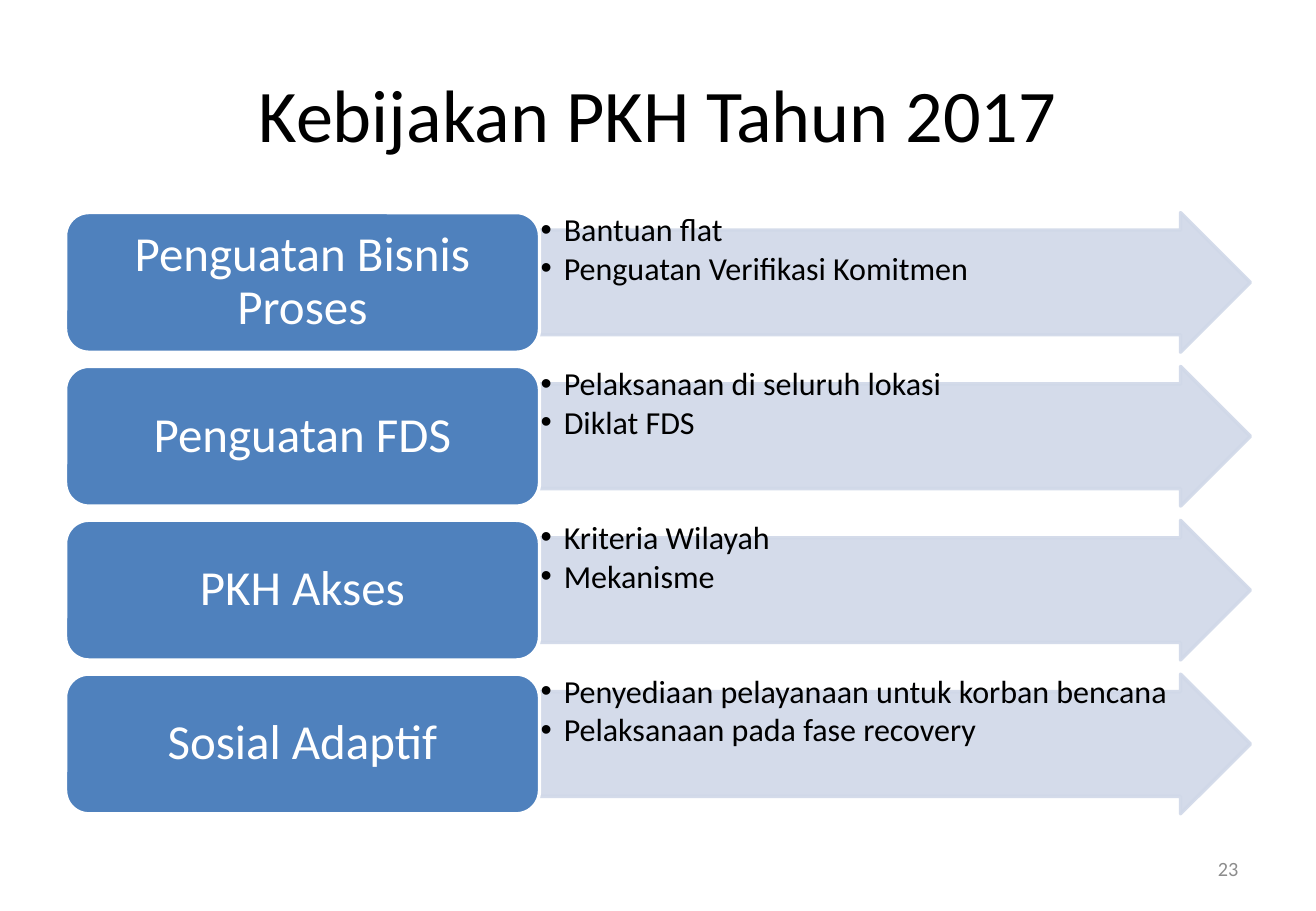
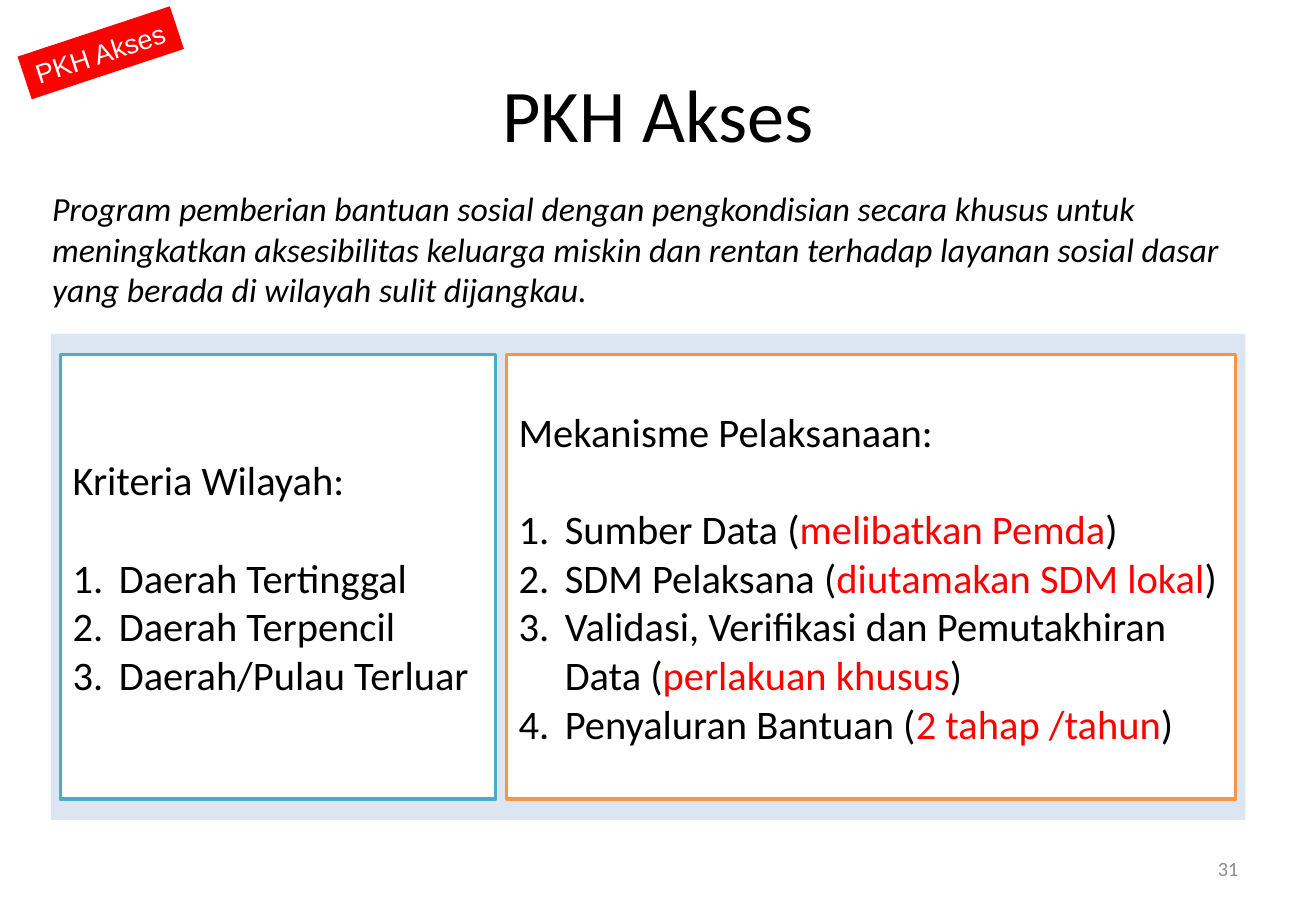
from lxml import etree
from pptx import Presentation
from pptx.dml.color import RGBColor
from pptx.enum.shapes import MSO_SHAPE
from pptx.enum.text import MSO_ANCHOR, PP_ALIGN
from pptx.oxml.ns import qn
from pptx.util import Inches, Pt

COLORS = {
    "black": "000000",
    "white": "FFFFFF",
    "blue": "4F81BD",
    "pale_blue": "D0D8E8",
    "panel": "DCE6F2",
    "teal": "4BACC6",
    "orange": "F79646",
    "red": "FF0000",
    "gray": "8C8C8C",
}
MARGIN, CONTENT_WIDTH = 0.54, 9.75
ROW_HEIGHT = 1.15

POLICIES = [
    ("Penguatan Bisnis Proses", ["Bantuan flat", "Penguatan Verifikasi Komitmen"]),
    ("Penguatan FDS", ["Pelaksanaan di seluruh lokasi", "Diklat FDS"]),
    ("PKH Akses", ["Kriteria Wilayah", "Mekanisme"]),
    ("Sosial Adaptif", ["Penyediaan pelayanaan untuk korban bencana",
                        "Pelaksanaan pada fase recovery"]),
]
DEFINITION = (
    "Program pemberian bantuan sosial dengan pengkondisian secara khusus untuk "
    "meningkatkan aksesibilitas keluarga miskin dan rentan terhadap layanan sosial "
    "dasar yang berada di wilayah sulit dijangkau."
)
# Each item is a list of runs; every second run is highlighted
CRITERIA = [["Daerah Tertinggal"], ["Daerah Terpencil"], ["Daerah/Pulau Terluar"]]
MECHANISM = [
    ["Sumber Data (", "melibatkan Pemda", ")"],
    ["SDM Pelaksana (", "diutamakan SDM lokal", ")"],
    ["Validasi, Verifikasi dan Pemutakhiran Data (", "perlakuan khusus", ")"],
    ["Penyaluran Bantuan (", "2 tahap /tahun", ")"],
]


def rgb(name):
    return RGBColor.from_string(COLORS[name])


# Text helpers
def style_run(run, size, color="black", font="Calibri", italic=False):
    run.font.size = Pt(size)
    run.font.name = font
    run.font.italic = italic
    run.font.color.rgb = rgb(color)


def write(frame, texts, size, color="black", align=PP_ALIGN.LEFT, **style):
    frame.text = "\n".join(texts)
    for paragraph in frame.paragraphs:
        paragraph.alignment = align
        for run in paragraph.runs:
            style_run(run, size, color, **style)


def set_insets(frame, horizontal, vertical):
    frame.margin_left = frame.margin_right = Inches(horizontal)
    frame.margin_top = frame.margin_bottom = Inches(vertical)


def add_marker(paragraph, indent, tag, **attributes):
    properties = paragraph._p.get_or_add_pPr()
    properties.set("marL", str(Inches(indent)))
    properties.set("indent", str(-Inches(indent)))
    font = "Arial" if tag == "a:buChar" else "+mj-lt"
    etree.SubElement(properties, qn("a:buFont"), typeface=font)
    etree.SubElement(properties, qn(tag), **attributes)


def add_text(slide, box, anchor=MSO_ANCHOR.TOP):
    frame = slide.shapes.add_textbox(*map(Inches, box)).text_frame
    frame.word_wrap = True
    frame.vertical_anchor = anchor
    return frame


# Shape helpers
def add_block(slide, kind, box, fill, line=None):
    block = slide.shapes.add_shape(kind, *map(Inches, box))
    block.shadow.inherit = False
    block.fill.solid()
    block.fill.fore_color.rgb = rgb(fill)
    if line:
        block.line.color.rgb = rgb(line)
        block.line.width = Pt(2)
    else:
        block.line.fill.background()
    return block


def set_opacity(block, percent):
    for color in block._element.spPr.iter(qn("a:srgbClr")):
        etree.SubElement(color, qn("a:alpha"), val=str(percent * 1000))


# Title and page number shared by the slides
def add_page(deck, title, number):
    slide = deck.slides.add_slide(deck.slide_layouts[6])
    heading = add_text(slide, (MARGIN, 0.3, CONTENT_WIDTH, 1.25), MSO_ANCHOR.MIDDLE)
    write(heading, [title], 44, align=PP_ALIGN.CENTER)
    footer = add_text(slide, (7.76, 6.95, 2.53, 0.4), MSO_ANCHOR.MIDDLE)
    write(footer, [number], 12, "gray", PP_ALIGN.RIGHT)
    return slide


# One policy: label on the left, arrow with bullets on the right
def add_policy_row(slide, box, label, points):
    left, top, width, height = box
    label_width = width * 0.4
    arrow_box = (left + label_width, top, width - label_width, height)

    arrow = add_block(slide, MSO_SHAPE.RIGHT_ARROW, arrow_box, "pale_blue", "pale_blue")
    arrow.adjustments[0], arrow.adjustments[1] = 0.75, 0.5
    set_opacity(arrow, 90)

    details = add_text(slide, arrow_box)
    set_insets(details, 0.01, 0.01)
    write(details, points, 19)
    for paragraph in details.paragraphs:
        add_marker(paragraph, 0.19, "a:buChar", char="•")
        paragraph.line_spacing = 0.9
        paragraph.space_after = Pt(2.5)

    name = add_block(slide, MSO_SHAPE.ROUNDED_RECTANGLE,
                     (left, top, label_width, height), "blue", "white").text_frame
    name.word_wrap = True
    name.vertical_anchor = MSO_ANCHOR.MIDDLE
    set_insets(name, 0.06, 0)
    write(name, [label], 29, "white", PP_ALIGN.CENTER)
    name.paragraphs[0].line_spacing = 0.9


def add_policy_list(slide, box):
    left, top, width, height = box
    pitch = (height - ROW_HEIGHT) / (len(POLICIES) - 1)
    for index, (label, points) in enumerate(POLICIES):
        row = (left, top + index * pitch, width, ROW_HEIGHT)
        add_policy_row(slide, row, label, points)


# Outlined card with a heading and a numbered list
def add_card(slide, box, line, heading, items):
    card = add_block(slide, MSO_SHAPE.RECTANGLE, box, "white", line).text_frame
    card.word_wrap = True
    card.vertical_anchor = MSO_ANCHOR.MIDDLE
    write(card, [heading], 24)
    card.paragraphs[0].space_after = Pt(29)
    for item in items:
        paragraph = card.add_paragraph()
        paragraph.alignment = PP_ALIGN.LEFT
        add_marker(paragraph, 0.38, "a:buAutoNum", type="arabicPeriod")
        for position, text in enumerate(item):
            run = paragraph.add_run()
            run.text = text
            style_run(run, 24, "red" if position % 2 else "black")


# Pale panel holding both cards
def add_access_panel(slide, box):
    left, top, width, height = box
    add_block(slide, MSO_SHAPE.RECTANGLE, box, "panel")
    side, edge, criteria_width = 0.08, 0.17, 3.58
    card_top, card_height = top + edge, height - 2 * edge
    mechanism_left = left + 2 * side + criteria_width + 0.01
    add_card(slide, (left + side, card_top, criteria_width, card_height),
             "teal", "Kriteria Wilayah:", CRITERIA)
    add_card(slide, (mechanism_left, card_top, left + width - side - mechanism_left,
                     card_height),
             "orange", "Mekanisme Pelaksanaan:", MECHANISM)


# Tilted tag in the corner
def add_tag(slide, box, text):
    tag = add_block(slide, MSO_SHAPE.RECTANGLE, box, "red")
    tag.rotation = 341.7
    tag.text_frame.word_wrap = False
    write(tag.text_frame, [text], 16, "white", font="Arial")


def build_policy_slide(deck):
    slide = add_page(deck, "Kebijakan PKH Tahun 2017", "23")
    add_policy_list(slide, (MARGIN, 1.75, CONTENT_WIDTH, 4.95))


def build_access_slide(deck):
    slide = add_page(deck, "PKH Akses", "31")
    write(add_text(slide, (0.33, 1.5, 10.25, 1.17)), [DEFINITION], 20, italic=True)
    add_tag(slide, (0.17, 0.25, 1.32, 0.37), "PKH Akses")
    add_access_panel(slide, (0.42, 2.75, 9.83, 4))


def main():
    deck = Presentation()
    deck.slide_width, deck.slide_height = Inches(10.83), Inches(7.5)
    build_policy_slide(deck)
    build_access_slide(deck)
    deck.save("out.pptx")


if __name__ == "__main__":
    main()
